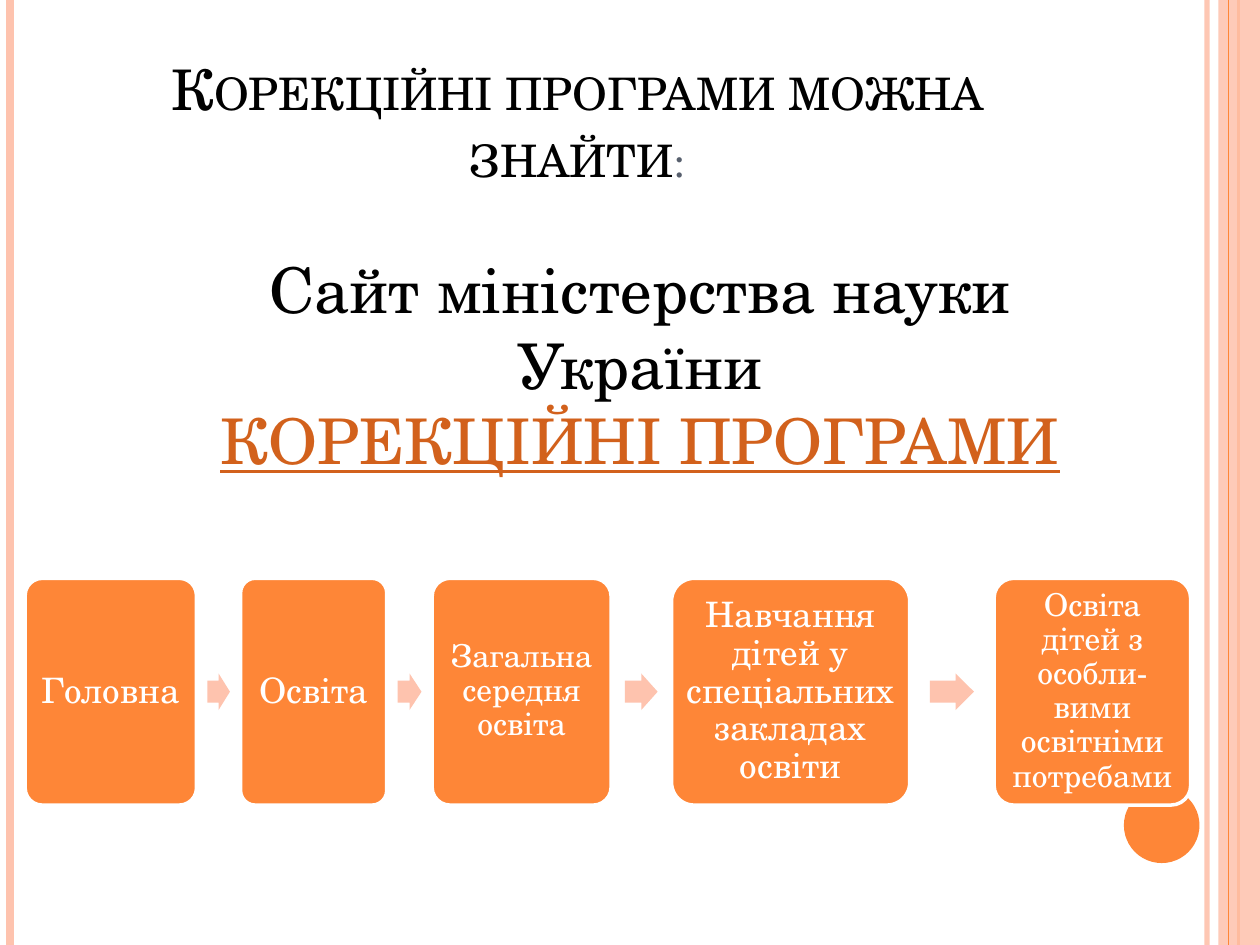
"""Build a slide showing the site path to the correction programmes."""
from lxml import etree
from pptx import Presentation
from pptx.dml.color import RGBColor
from pptx.enum import shapes, text
from pptx.oxml import ns
from pptx.util import Inches, Pt

FONT = "TeX Gyre Schola"
ORANGE, PEACH, WHITE, BLACK = "FE8637", "FEC3AE", "FFFFFF", "000000"
TITLE = [("Корекційні програми можна знайти", 32, BLACK), (":", 30, "575F6D")]
SITE = [("Сайт міністерства науки України", BLACK, False),
        ("КОРЕКЦІЙНІ ПРОГРАМИ", "D2611C", True)]
STEPS = [
    ("Головна", 0.2, 1.36, 20),
    ("Освіта", 1.91, 1.16, 20),
    ("Загальна середня освіта", 3.43, 1.42, 18),
    ("Навчання дітей у спеціальних закладах освіти", 5.33, 1.89, 20),
    ("Освіта дітей з особли-вими освітніми потребами", 7.89, 1.56, 18),
]
ARROW_WIDTHS = [0.18, 0.19, 0.26, 0.35]
STEP_TOP, STEP_HEIGHT, ARROW_HEIGHT = 4.59, 1.8, 0.29
SIDE_LINES = [(9.58, PEACH, 3, 93), (0.08, PEACH, 4.5, 100), (9.83, ORANGE, 1.5, 100)]
THIN_LINE = (9.75, ORANGE, 0.75, 100)


def rgb(color):
    return RGBColor.from_string(color)


def set_alpha(fill_parent, percent):
    clr = next(fill_parent.iter(ns.qn("a:srgbClr")))
    etree.SubElement(clr, ns.qn("a:alpha")).set("val", str(percent * 1000))


def add_side_line(s, x, color, width, alpha):
    c = s.shapes.add_connector(shapes.MSO_CONNECTOR.STRAIGHT,
                               Inches(x), 0, Inches(x), Inches(7.5))
    c.line.color.rgb = rgb(color)
    c.line.width = Pt(width)
    if alpha < 100:
        set_alpha(c.line._ln, alpha)
    etree.SubElement(c._element.spPr, ns.qn("a:effectLst"))


def add_shape(s, kind, box, color):
    sp = s.shapes.add_shape(kind, *map(Inches, box))
    sp.shadow.inherit = False
    sp.fill.solid()
    sp.fill.fore_color.rgb = rgb(color)
    sp.line.fill.background()
    return sp


def add_text_box(s, box):
    tf = s.shapes.add_textbox(*map(Inches, box)).text_frame
    tf.word_wrap = True
    return tf


def add_run(p, words, size, color):
    p.alignment = text.PP_ALIGN.CENTER
    r = p.add_run()
    r.text = words
    r.font.name, r.font.size = FONT, Pt(size)
    r.font.color.rgb = rgb(color)
    return r


def add_step(s, words, left, width, size):
    sp = add_shape(s, shapes.MSO_SHAPE.ROUNDED_RECTANGLE,
                   (left, STEP_TOP, width, STEP_HEIGHT), ORANGE)
    sp.adjustments[0] = 0.1
    sp.line.color.rgb = rgb(WHITE)
    sp.line.width = Pt(2)
    tf = sp.text_frame
    tf.word_wrap = True
    tf.vertical_anchor = text.MSO_ANCHOR.MIDDLE
    tf.margin_left = tf.margin_right = tf.margin_top = tf.margin_bottom = Inches(0.03)
    p = tf.paragraphs[0]
    p.line_spacing = 0.9
    add_run(p, words, size, WHITE)


def add_arrow(s, start, end, width):
    left = (start + end - width) / 2
    top = STEP_TOP + (STEP_HEIGHT - ARROW_HEIGHT) / 2
    sp = add_shape(s, shapes.MSO_SHAPE.RIGHT_ARROW,
                   (left, top, width, ARROW_HEIGHT), PEACH)
    sp.adjustments[0] = 0.6


def main():
    prs = Presentation()
    prs.slide_width, prs.slide_height = Inches(10), Inches(7.5)
    s = prs.slides.add_slide(prs.slide_layouts[6])

    for line in SIDE_LINES:
        add_side_line(s, *line)
    band = add_shape(s, shapes.MSO_SHAPE.RECTANGLE, (9.67, 0, 0.33, 7.5), PEACH)
    set_alpha(band._element.spPr, 87)
    add_side_line(s, *THIN_LINE)
    add_shape(s, shapes.MSO_SHAPE.OVAL, (8.92, 6.25, 0.6, 0.6), ORANGE)

    tf = add_text_box(s, (0.5, 0.3, 8.17, 1.25))
    tf.vertical_anchor = text.MSO_ANCHOR.BOTTOM
    for words, size, color in TITLE:
        r = add_run(tf.paragraphs[0], words, size, color)
        r.font._element.set("cap", "small")

    tf = add_text_box(s, (1.3, 1.94, 7.56, 2.22))
    for i, (words, color, underline) in enumerate(SITE):
        p = tf.add_paragraph() if i else tf.paragraphs[0]
        add_run(p, words, 36, color).font.underline = underline

    for step in STEPS:
        add_step(s, *step)
    for (_, left, width, _), after, arrow in zip(STEPS, STEPS[1:], ARROW_WIDTHS):
        add_arrow(s, left + width, after[1], arrow)

    prs.save("out.pptx")


if __name__ == "__main__":
    main()
